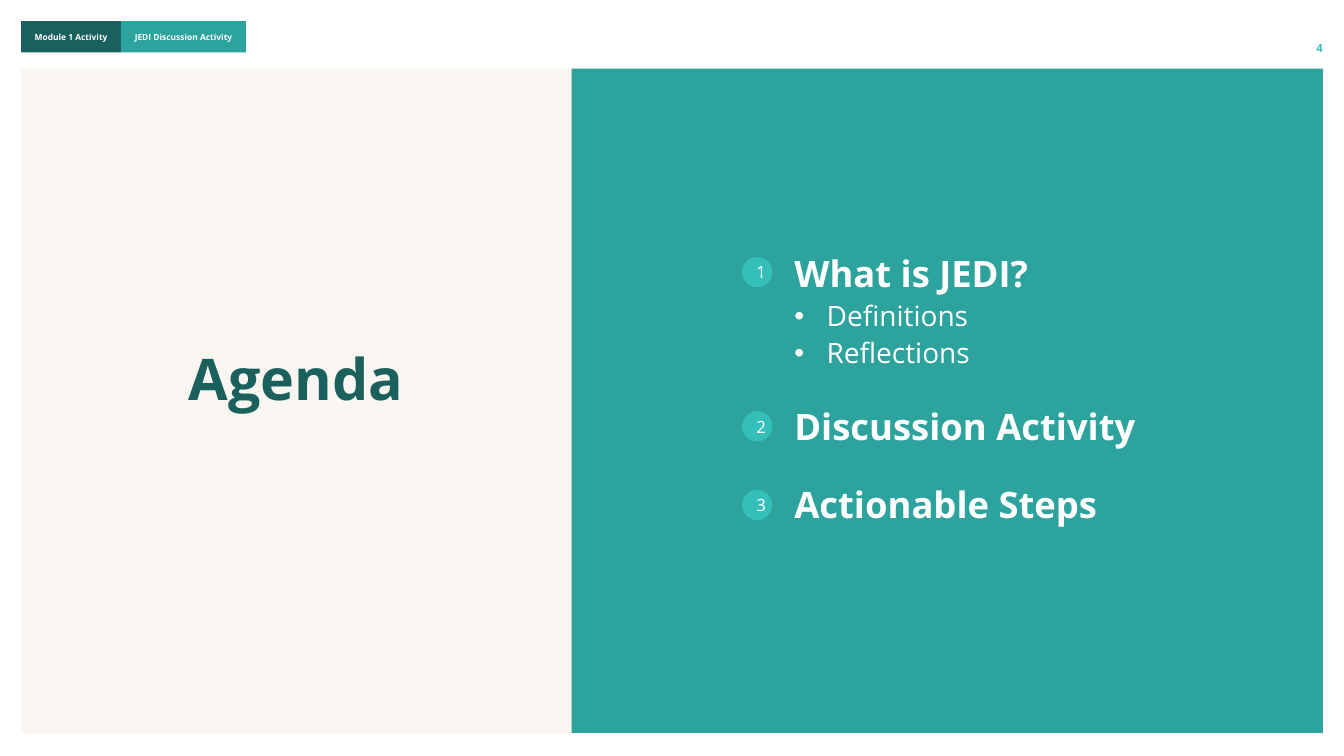
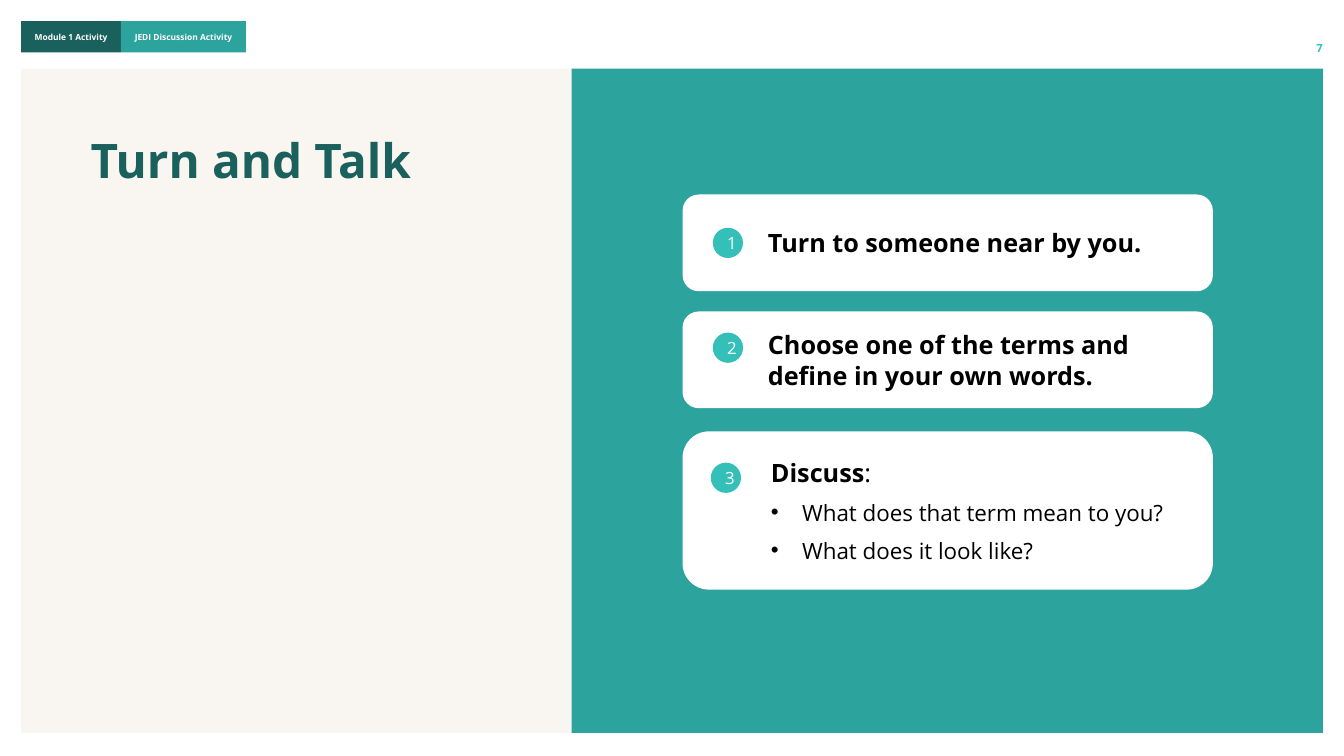
from lxml.etree import SubElement
from pptx import Presentation
from pptx.dml.color import RGBColor
from pptx.enum.shapes import MSO_SHAPE
from pptx.enum.text import MSO_ANCHOR, PP_ALIGN
from pptx.oxml.ns import qn
from pptx.util import Pt

EMU_PER_PX = 9144  # 100 px to the inch
FONT = "Open Sans"
TEAL, DARK_TEAL, BRIGHT_TEAL = "2DA39D", "1A605D", "35BFB9"
CREAM, WHITE, BLACK = "F4ECE4", "FFFFFF", "000000"
DEFAULT_INSETS = (10, 5, 10, 5)
MARGIN = 21
BADGE_SIZE = 30


def px(length):
    return length * EMU_PER_PX


def rgb(color):
    return RGBColor.from_string(color)


def set_frame(shape, anchor, insets):
    """Set wrapping, vertical anchor and insets (left, top, right, bottom)."""
    frame = shape.text_frame
    frame.word_wrap = True
    frame.vertical_anchor = anchor
    (frame.margin_left, frame.margin_top,
     frame.margin_right, frame.margin_bottom) = map(px, insets)
    return frame


def add_box(slide, box, color, kind=MSO_SHAPE.RECTANGLE, opacity=100,
            insets=DEFAULT_INSETS):
    shape = slide.shapes.add_shape(kind, *map(px, box))
    shape.shadow.inherit = False
    shape.fill.solid()
    shape.fill.fore_color.rgb = rgb(color)
    shape.line.fill.background()
    if opacity < 100:
        fill_color = shape._element.spPr.find(qn("a:solidFill"))[0]
        SubElement(fill_color, qn("a:alpha"), val=str(opacity * 1000))
    return set_frame(shape, MSO_ANCHOR.MIDDLE, insets)


def add_text_box(slide, box, anchor=MSO_ANCHOR.TOP, insets=DEFAULT_INSETS):
    return set_frame(slide.shapes.add_textbox(*map(px, box)), anchor, insets)


def add_run(paragraph, text, size, color, bold=False):
    run = paragraph.add_run()
    run.text = text
    font = run.font
    font.name, font.size, font.bold = FONT, Pt(size), bold
    font.color.rgb = rgb(color)


def write(frame, text, size, color, bold=False, align=PP_ALIGN.LEFT,
          line_spacing=1.0, before=0, after=0, bullet_indent=0):
    """Fill the empty first paragraph, or append one; return the paragraph."""
    paragraph = frame.add_paragraph() if frame.text else frame.paragraphs[0]
    paragraph.alignment = align
    paragraph.line_spacing = line_spacing
    paragraph.space_before, paragraph.space_after = Pt(before), Pt(after)
    if bullet_indent:
        paragraph.level = 1
        properties = paragraph._p.get_or_add_pPr()
        properties.set("marL", str(px(bullet_indent)))
        properties.set("indent", str(-px(bullet_indent)))
        SubElement(properties, qn("a:buFont"), typeface="Arial")
        SubElement(properties, qn("a:buChar"), char="•")
    add_run(paragraph, text, size, color, bold)
    return paragraph


def add_slide(presentation, number):
    """Add a blank slide with the shared panels, header tabs and page number."""
    slide = presentation.slides.add_slide(presentation.slide_layouts[6])
    add_box(slide, (MARGIN, 68, 1292, 659), CREAM, opacity=50)
    add_box(slide, (567, 68, 745, 659), TEAL)
    tab_left = MARGIN
    for text, width, color in (("Module 1 Activity", 99, DARK_TEAL),
                               ("JEDI Discussion Activity", 124, TEAL)):
        tab = add_box(slide, (tab_left, MARGIN, width, 31), color,
                      insets=(0, 5, 0, 5))
        write(tab, text, 6, WHITE, bold=True, align=PP_ALIGN.CENTER)
        tab_left += width
    page = add_text_box(slide, (1225, MARGIN, 87, 33), MSO_ANCHOR.BOTTOM,
                        (10, 0, 0, 0))
    write(page, str(number), 8, BRIGHT_TEAL, bold=True, align=PP_ALIGN.RIGHT)
    return slide


def add_title(slide, box, text, size, align=PP_ALIGN.LEFT):
    write(add_text_box(slide, box), text, size, DARK_TEAL, bold=True,
          align=align, line_spacing=0.9)


def add_badges(slide, positions):
    """Add numbered circles at the given (left, top) positions."""
    for number, (left, top) in enumerate(positions, 1):
        badge = add_box(slide, (left, top, BADGE_SIZE, BADGE_SIZE),
                        BRIGHT_TEAL, MSO_SHAPE.OVAL)
        write(badge, str(number), 12, WHITE, align=PP_ALIGN.CENTER)


def add_card(slide, top, height, text):
    card = add_box(slide, (677, top, 526, height), WHITE,
                   MSO_SHAPE.ROUNDED_RECTANGLE, insets=(80, 0, 40, 0))
    return card, write(card, text, 18, BLACK, bold=True)


def build_agenda(presentation):
    slide = add_slide(presentation, 4)
    agenda = add_text_box(slide, (778, 249, 444, 264))
    heading = {"size": 26, "color": WHITE, "bold": True,
               "line_spacing": 0.9, "before": 10}
    item = {"size": 20, "color": WHITE, "line_spacing": 0.9,
            "before": 5, "bullet_indent": 32}
    write(agenda, "What is JEDI?", **heading)
    write(agenda, "Definitions", **item)
    write(agenda, "Reflections", after=18, **item)
    write(agenda, "Discussion Activity", after=18, **heading)
    write(agenda, "Actionable Steps", **heading)
    add_title(slide, (153, 343, 282, 134), "Agenda", 41, PP_ALIGN.CENTER)
    add_badges(slide, [(736, top) for top in (255, 408, 486)])


def build_turn_and_talk(presentation):
    slide = add_slide(presentation, 7)
    add_title(slide, (80, 131, 380, 151), "Turn and Talk", 34)
    add_card(slide, 193, 96, "Turn to someone near by you.")
    add_card(slide, 309, 96,
             "Choose one of the terms and define in your own words.")
    card, discuss = add_card(slide, 428, 157, "Discuss")
    discuss.space_after = Pt(6)
    add_run(discuss, ":", 18, BLACK)
    question = {"size": 16, "color": BLACK, "line_spacing": 1.1,
                "bullet_indent": 31}
    write(card, "What does that term mean to you?", after=6, **question)
    write(card, "What does it look like?", **question)
    add_badges(slide, [(707, 226), (707, 330), (705, 459)])


def main():
    presentation = Presentation()
    presentation.slide_width, presentation.slide_height = px(1333), px(750)
    build_agenda(presentation)
    build_turn_and_talk(presentation)
    presentation.save("out.pptx")


if __name__ == "__main__":
    main()
